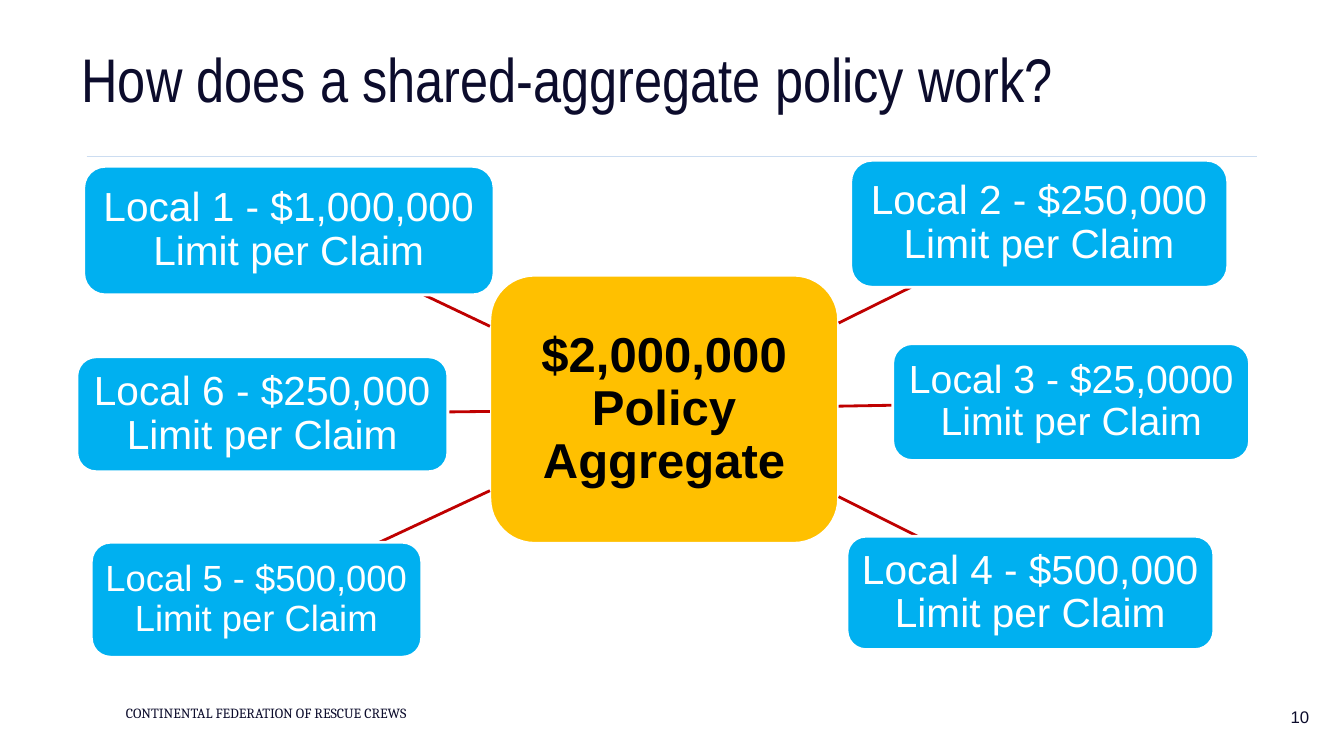
from collections import namedtuple
from dataclasses import dataclass

from lxml import etree
from pptx import Presentation
from pptx.dml.color import RGBColor
from pptx.enum.shapes import MSO_CONNECTOR, MSO_SHAPE
from pptx.enum.text import MSO_ANCHOR, PP_ALIGN
from pptx.oxml.ns import qn
from pptx.util import Inches, Pt

STRAIGHT = MSO_CONNECTOR.STRAIGHT
ROUNDED = MSO_SHAPE.ROUNDED_RECTANGLE
TOP, MIDDLE = MSO_ANCHOR.TOP, MSO_ANCHOR.MIDDLE
LEFT, CENTER, RIGHT = PP_ALIGN.LEFT, PP_ALIGN.CENTER, PP_ALIGN.RIGHT

# The grid has 100 columns and 100 rows.
WIDTH, HEIGHT = 13.33, 7.5
COLUMN, ROW = WIDTH / 100, HEIGHT / 100
BLANK_LAYOUT = 6


@dataclass(frozen=True)
class Theme:
    ink: str = "0C0C2C"
    rule: str = "CCDDF1"
    hub: str = "FFC000"
    hub_text: str = "000000"
    card: str = "00B0F0"
    white: str = "FFFFFF"
    spoke: str = "BF0000"
    title_font: str = "Arial Narrow"
    body_font: str = "Arial"
    footer_font: str = "Cambria"
    title_size: int = 44
    hub_size: int = 35
    footer_size: int = 10
    number_size: int = 12
    thin: float = 0.75
    thick: float = 2


THEME = Theme()
Area = namedtuple("Area", "column row columns rows")

TITLE = Area(5.33, 5.87, 87.68, 10.67)
FOOTER = Area(8.63, 92.75, 64.58, 3.33)
NUMBER = Area(95, 92.13, 3.15, 5.33)
RULE_START, RULE_END, RULE_ROW = 6.45, 93.53, 20.75
HUB = Area(36.45, 36.4, 25.95, 35.47)

# Each local: area, limit, type size
LOCALS = [
    (Area(6.23, 22, 30.53, 17), "$1,000,000", 29),
    (Area(63.3, 21.2, 28.05, 16.8), "$250,000", 29),
    (Area(66.42, 45.45, 26.55, 15.47), "$25,0000", 28),
    (Area(63.02, 70.93, 27.3, 15), "$500,000", 29),
    (Area(6.8, 71.73, 24.58, 15.2), "$500,000", 26),
    (Area(5.72, 47.2, 27.6, 15.2), "$250,000", 29),
]


def color(code):
    return RGBColor.from_string(code)


def place(area):
    """Turn a grid area into left, top, width and height."""
    return (Inches(area.column * COLUMN), Inches(area.row * ROW),
            Inches(area.columns * COLUMN), Inches(area.rows * ROW))


def write(shape, text, *, size, ink=THEME.ink, font=THEME.body_font, bold=False,
          align=LEFT, anchor=TOP, spacing=0.9, before=0, insets=(0.1, 0.05)):
    frame = shape.text_frame
    frame.word_wrap = True
    frame.vertical_anchor = anchor
    frame.margin_left = frame.margin_right = Inches(insets[0])
    frame.margin_top = frame.margin_bottom = Inches(insets[1])
    para = frame.paragraphs[0]
    para.alignment = align
    para.line_spacing = spacing
    para.space_before = Pt(before)
    span = para.add_run()
    span.text = text
    span.font.name = font
    span.font.size = Pt(size)
    span.font.bold = bold
    span.font.color.rgb = color(ink)


def add_text(page, area, text, **style):
    write(page.shapes.add_textbox(*place(area)), text, **style)


def add_card(page, area, text, fill, **style):
    card = page.shapes.add_shape(ROUNDED, *place(area))
    card.shadow.inherit = False
    card.fill.solid()
    card.fill.fore_color.rgb = color(fill)
    card.line.color.rgb = color(THEME.white)
    card.line.width = Pt(THEME.thick)
    write(card, text, align=CENTER, anchor=MIDDLE, **style)


def add_line(page, start, end, ink, weight):
    """Join two (column, row) points."""
    line = page.shapes.add_connector(
        STRAIGHT, Inches(start[0] * COLUMN), Inches(start[1] * ROW),
        Inches(end[0] * COLUMN), Inches(end[1] * ROW))
    line.line.color.rgb = color(ink)
    line.line.width = Pt(weight)
    etree.SubElement(line._element.spPr, qn("a:effectLst"))


def center(area):
    return area.column + area.columns / 2, area.row + area.rows / 2


def edge_toward(area, target):
    """Find where the ray from the area's center to the target leaves it."""
    x, y = center(area)
    across, down = target[0] - x, target[1] - y
    share = min(half / abs(step) for half, step in
                ((area.columns / 2, across), (area.rows / 2, down)) if step)
    return x + across * share, y + down * share


def add_spoke(page, area):
    add_line(page, edge_toward(HUB, center(area)), edge_toward(area, center(HUB)),
             THEME.spoke, THEME.thick)


def main():
    deck = Presentation()
    deck.slide_width, deck.slide_height = Inches(WIDTH), Inches(HEIGHT)
    page = deck.slides.add_slide(deck.slide_layouts[BLANK_LAYOUT])

    add_line(page, (RULE_START, RULE_ROW), (RULE_END, RULE_ROW), THEME.rule, THEME.thin)
    add_text(page, FOOTER, "CONTINENTAL FEDERATION OF RESCUE CREWS",
             size=THEME.footer_size, font=THEME.footer_font)
    add_text(page, NUMBER, "10", size=THEME.number_size, align=RIGHT,
             anchor=MIDDLE, spacing=1.0)
    add_text(page, TITLE, "How does a shared-aggregate policy work?",
             size=THEME.title_size, font=THEME.title_font, before=10)

    add_card(page, HUB, "$2,000,000 Policy Aggregate", THEME.hub,
             size=THEME.hub_size, ink=THEME.hub_text, bold=True, insets=(0.1, 0.1))
    for number, (area, limit, size) in enumerate(LOCALS, start=1):
        add_spoke(page, area)
        add_card(page, area, f"Local {number} - {limit} Limit per Claim", THEME.card,
                 size=size, ink=THEME.white, insets=(0.08, 0.08))

    deck.save("out.pptx")


if __name__ == "__main__":
    main()
